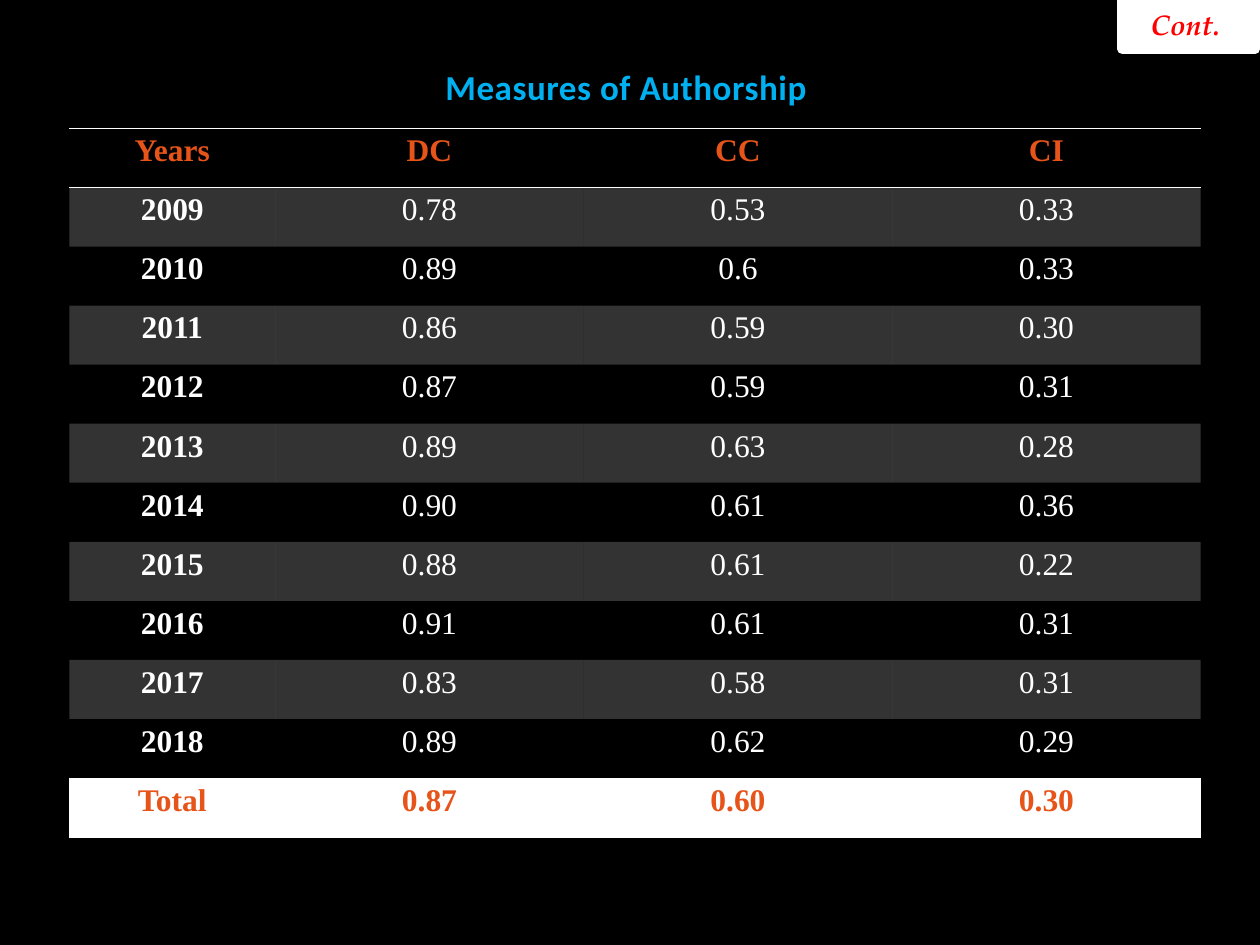
from dataclasses import dataclass

from lxml.etree import SubElement
from pptx import Presentation
from pptx.dml.color import RGBColor
from pptx.enum.shapes import MSO_SHAPE
from pptx.enum.text import MSO_ANCHOR, PP_ALIGN
from pptx.oxml import parse_xml
from pptx.oxml.ns import nsdecls, qn
from pptx.util import Inches, Pt

WIDE, HIGH = Inches(10), Inches(7.5)
WHITE, BLACK, ORANGE = "FFFFFF", "000000", "E6541A"
SERIF = "Times New Roman"
PLAIN_GRID = "{2D5ABB26-0587-4C30-8999-92F81FD0307C}"

HEAD = ("Years", "DC", "CC", "CI")
YEARS = [
    ("2009", "0.78", "0.53", "0.33"),
    ("2010", "0.89", "0.6", "0.33"),
    ("2011", "0.86", "0.59", "0.30"),
    ("2012", "0.87", "0.59", "0.31"),
    ("2013", "0.89", "0.63", "0.28"),
    ("2014", "0.90", "0.61", "0.36"),
    ("2015", "0.88", "0.61", "0.22"),
    ("2016", "0.91", "0.61", "0.31"),
    ("2017", "0.83", "0.58", "0.31"),
    ("2018", "0.89", "0.62", "0.29"),
]
TOTAL = ("Total", "0.87", "0.60", "0.30")


@dataclass(frozen=True)
class Box:
    """A place on the slide, in shares of its width and height."""
    x: float
    y: float
    w: float
    h: float

    def spot(self) -> tuple:
        return (int(self.x * WIDE), int(self.y * HIGH),
                int(self.w * WIDE), int(self.h * HIGH))


@dataclass(frozen=True)
class Row:
    texts: tuple
    color: str = WHITE
    bold: bool = False
    band: bool = False
    rules: tuple = ()


def paint(form, color: str) -> None:
    """Give a font, fill or line format a solid colour."""
    if hasattr(form, "solid"):
        form.solid()
        form.fore_color.rgb = RGBColor.from_string(color)
    else:
        form.color.rgb = RGBColor.from_string(color)


def write(frame, text: str, *, font: str, size: float, color: str,
          bold=True, italic=False, before=0, lines=1.0, track=0) -> None:
    part = frame.paragraphs[0]
    part.alignment = PP_ALIGN.CENTER
    part.space_before = Pt(before)
    part.line_spacing = lines
    run = part.add_run()
    run.text = text
    run.font.name, run.font.size = font, Pt(size)
    run.font.bold, run.font.italic = bold, italic
    paint(run.font, color)
    if track:
        run.font._element.set("spc", str(track))


def rule(cell, side: str) -> None:
    """Draw a white one-point border; call for the top before the bottom."""
    cell._tc.get_or_add_tcPr().append(parse_xml(
        f'<a:{side} {nsdecls("a")} w="{Pt(1)}"><a:solidFill>'
        f'<a:srgbClr val="{WHITE}"/></a:solidFill></a:{side}>'))


def shade(cell, band: bool) -> None:
    """Fill a banded cell with white at 20 percent, else leave it clear."""
    if not band:
        cell.fill.background()
        return
    paint(cell.fill, WHITE)
    tint = cell._tc.tcPr.find(".//" + qn("a:srgbClr"))
    SubElement(tint, qn("a:alpha")).set("val", "20000")


def fill_cell(cell, text: str, row: Row, bold: bool) -> None:
    cell.margin_left = cell.margin_right = Inches(0.07)
    cell.margin_top = cell.margin_bottom = 0
    for side in row.rules:
        rule(cell, side)
    shade(cell, row.band)
    write(cell.text_frame, text, font=SERIF, size=18, color=row.color,
          bold=bold, lines=1.15)


def draw_grid(slide, box: Box, rows: list, cols: tuple) -> None:
    """Draw the table; cols holds each column's share of its width."""
    spot = box.spot()
    grid = slide.shapes.add_table(len(rows), len(cols), *spot).table
    grid.first_row = grid.horz_banding = False
    grid._tbl.tblPr.find(qn("a:tableStyleId")).text = PLAIN_GRID
    for col, share in zip(grid.columns, cols):
        col.width = int(spot[2] * share)
    for r, row in enumerate(rows):
        grid.rows[r].height = spot[3] // len(rows)
        for c, text in enumerate(row.texts):
            fill_cell(grid.cell(r, c), text, row, row.bold or c == 0)


def draw_title(slide, box: Box, text: str) -> None:
    frame = slide.shapes.add_textbox(*box.spot()).text_frame
    frame.word_wrap = True
    write(frame, text, font="Calibri", size=20, color="00B0F0",
          before=6, track=30)


def draw_tag(slide, box: Box, text: str) -> None:
    tag = slide.shapes.add_shape(MSO_SHAPE.RECTANGLE, *box.spot())
    tag.shadow.inherit = False
    paint(tag.fill, WHITE)
    paint(tag.line, WHITE)
    tag.line.width = Pt(6)
    frame = tag.text_frame
    frame.word_wrap = True
    frame.vertical_anchor = MSO_ANCHOR.MIDDLE
    write(frame, text, font="TeX Gyre Pagella", size=16.2, color="FF0000",
          italic=True, before=4)


def main() -> None:
    deck = Presentation()
    deck.slide_width, deck.slide_height = WIDE, HIGH
    slide = deck.slides.add_slide(deck.slide_layouts[6])
    paint(slide.background.fill, BLACK)

    rows = [Row(HEAD, ORANGE, bold=True, rules=("lnT", "lnB"))]
    rows += [Row(texts, band=i % 2 == 0) for i, texts in enumerate(YEARS)]
    rows.append(Row(TOTAL, ORANGE, bold=True, band=True, rules=("lnB",)))

    draw_title(slide, Box(0.047, 0.063, 0.9, 0.63), "Measures of Authorship")
    draw_tag(slide, Box(0.891, 0, 0.105, 0.052), "Cont. ")
    first = 0.182
    draw_grid(slide, Box(0.055, 0.136, 0.898, 0.75), rows,
              (first, *[(1 - first) / 3] * 3))
    deck.save("out.pptx")


if __name__ == "__main__":
    main()
